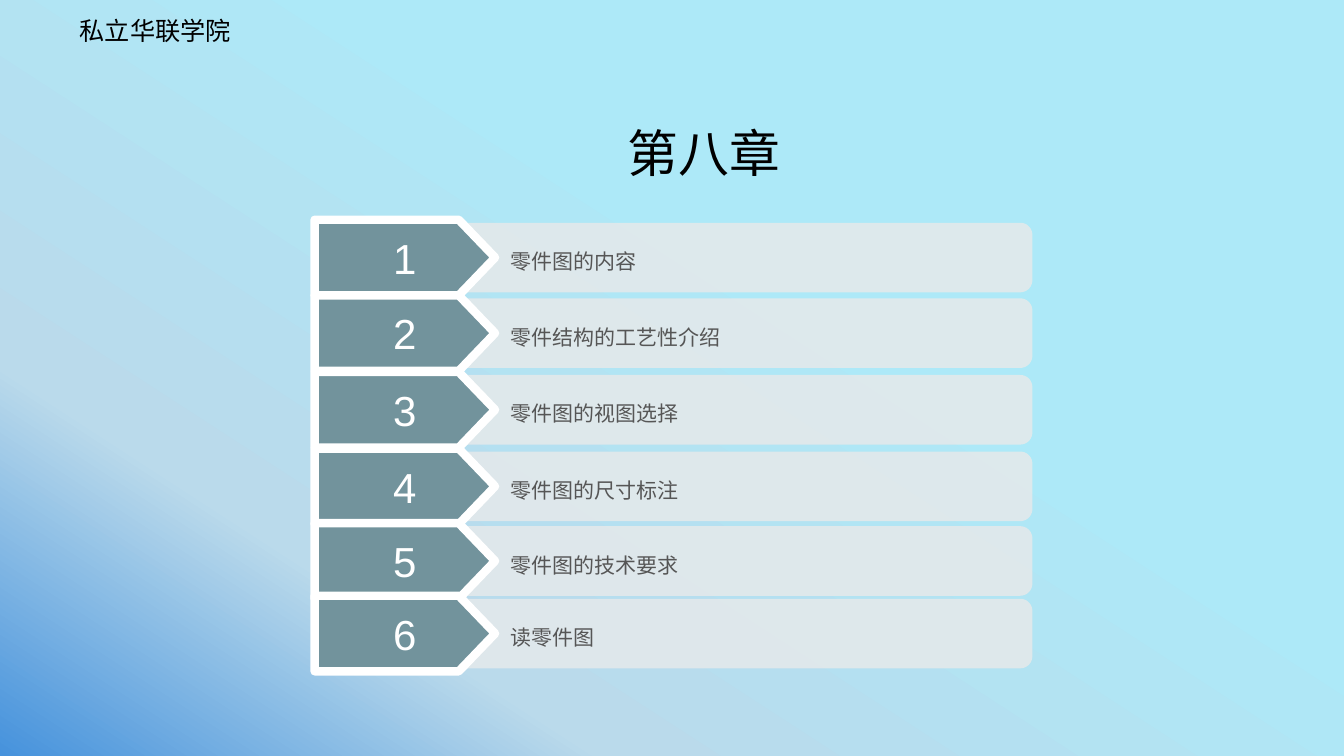
import math

from lxml import etree
from pptx import Presentation
from pptx import util as u
from pptx.dml.color import RGBColor
from pptx.enum import shapes, text
from pptx.oxml import ns

COLOURS = {"bar": "E3E9EB", "tag": "72939C", "label": "565656", "white": "FFFFFF", "black": "000000"}
BACKGROUND = [(0, "4692DC"), (24, "BADAEB"), (62, "ADE9F8"), (100, "ADE9F8")]
CJK_FONT = "Noto Sans CJK JP"
TOPICS = [
    (2.21, "零件图的内容"),
    (2.96, "零件结构的工艺性介绍"),
    (3.72, "零件图的视图选择"),
    (4.48, "零件图的尺寸标注"),
    (5.22, "零件图的技术要求"),
    (5.94, "读零件图"),
]
BAR_LEFT, BAR_WIDTH, BAR_HEIGHT, CORNER = 4.58, 5.66, 0.69, 0.12
TAG_LEFT, TAG_WIDTH, TAG_HEIGHT = 3.12, 1.79, 0.75


def colour(name):
    """Return the named colour."""
    return RGBColor.from_string(COLOURS[name])


def set_background(slide):
    """Fill the background with a diagonal gradient."""
    fill = slide.background.fill
    fill.gradient()
    fill.gradient_angle = 57
    stops = slide._element.find(".//" + ns.qn("a:gsLst"))
    for stop in list(stops):
        stops.remove(stop)
    for percent, value in BACKGROUND:
        stop = etree.SubElement(stops, ns.qn("a:gs"), pos=str(percent * 1000))
        etree.SubElement(stop, ns.qn("a:srgbClr"), val=value)


def write_text(shape, wording, size, colour_name, margins, font="Arial",
               align=text.PP_ALIGN.LEFT, anchor=text.MSO_ANCHOR.MIDDLE, spacing=1.0):
    """Write one formatted paragraph into a shape."""
    frame = shape.text_frame
    frame.word_wrap = True
    frame.auto_size = text.MSO_AUTO_SIZE.NONE
    frame.vertical_anchor = anchor
    frame.margin_left, frame.margin_top, frame.margin_right, frame.margin_bottom = map(u.Inches, margins)
    paragraph = frame.paragraphs[0]
    paragraph.alignment = align
    paragraph.line_spacing = spacing
    run = paragraph.add_run()
    run.text = wording
    run.font.name = font
    run.font.size = u.Pt(size)
    run.font.color.rgb = colour(colour_name)
    etree.SubElement(run.font._element, ns.qn("a:ea"), typeface=CJK_FONT)


def add_header(slide):
    """Add the school name at the top left."""
    box = slide.shapes.add_textbox(u.Inches(0.74), u.Inches(0.1), u.Inches(2.94), u.Inches(0.4))
    write_text(box, "私立华联学院", 18, "black", (0.05,) * 4, CJK_FONT, anchor=text.MSO_ANCHOR.TOP)


def add_title(slide):
    """Place and fill the chapter title."""
    title = slide.shapes.title
    title.left, title.top, title.width, title.height = map(u.Inches, (4.03, 1.32, 5.91, 0.57))
    write_text(title, "第八章", 36.3, "black", (0.1, 0.05, 0.1, 0.05),
               align=text.PP_ALIGN.CENTER, anchor=text.MSO_ANCHOR.TOP, spacing=0.7)


def add_bar(slide, top, topic):
    """Add a translucent bar whose right corners are rounded."""
    right, bottom = BAR_LEFT + BAR_WIDTH, top + BAR_HEIGHT
    points = []
    for centre_y, start in ((top + CORNER, -90), (bottom - CORNER, 0)):
        for angle in range(start, start + 91, 10):
            radians = math.radians(angle)
            points.append((right - CORNER + CORNER * math.cos(radians),
                           centre_y + CORNER * math.sin(radians)))
    points.append((BAR_LEFT, bottom))
    builder = slide.shapes.build_freeform(u.Inches(BAR_LEFT), u.Inches(top))
    builder.add_line_segments([(u.Inches(x), u.Inches(y)) for x, y in points])
    bar = builder.convert_to_shape()
    bar.shadow.inherit = False
    bar.fill.solid()
    bar.fill.fore_color.rgb = colour("bar")
    value = bar._element.spPr.find(".//" + ns.qn("a:srgbClr"))
    etree.SubElement(value, ns.qn("a:alpha"), val="90000")
    bar.line.fill.background()
    write_text(bar, topic, 15, "label", (0.48, 0, 0, 0), spacing=1.3)


def add_number_tag(slide, top, number):
    """Add a white-edged arrow tag holding the topic number."""
    tag = slide.shapes.add_shape(shapes.MSO_SHAPE.PENTAGON, u.Inches(TAG_LEFT), u.Inches(top),
                                 u.Inches(TAG_WIDTH), u.Inches(TAG_HEIGHT))
    tag.adjustments[0] = 0.48
    tag.shadow.inherit = False
    tag.fill.solid()
    tag.fill.fore_color.rgb = colour("tag")
    tag.line.color.rgb = colour("white")
    tag.line.width = u.Pt(6)
    etree.SubElement(tag._element.spPr.find(ns.qn("a:ln")), ns.qn("a:round"))
    write_text(tag, str(number), 30, "white", (0.28, 0.05, 0.1, 0.05), align=text.PP_ALIGN.CENTER)


def main():
    """Build the chapter contents slide."""
    presentation = Presentation()
    presentation.slide_width = u.Inches(13.33)
    presentation.slide_height = u.Inches(7.5)
    slide = presentation.slides.add_slide(presentation.slide_layouts[5])
    set_background(slide)
    add_header(slide)
    add_title(slide)
    for number, (top, topic) in enumerate(TOPICS, start=1):
        add_bar(slide, top, topic)
        add_number_tag(slide, top - 0.03, number)
    presentation.save("out.pptx")


if __name__ == "__main__":
    main()
